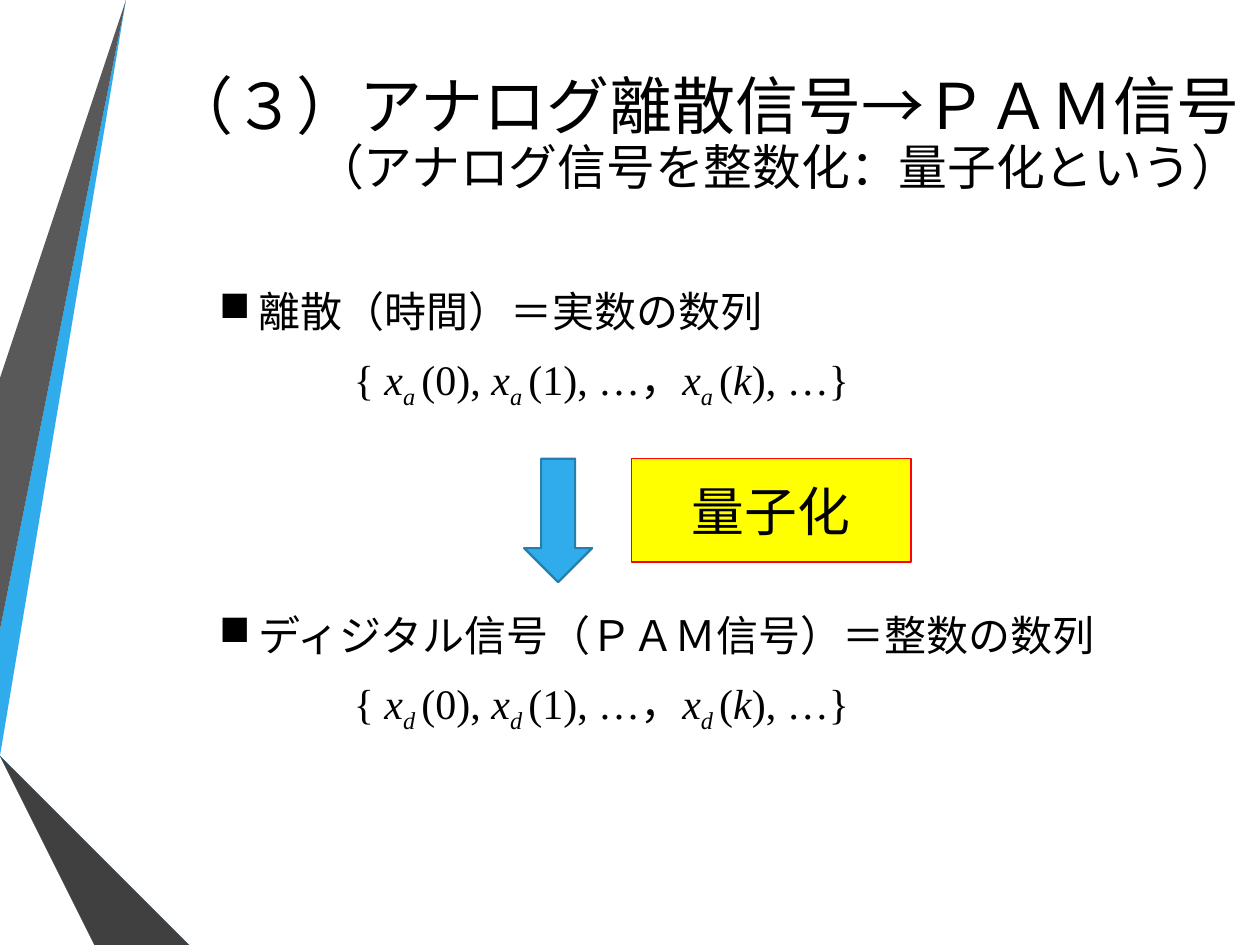
import pptx
import pptx.util
import pptx.dml.color
import pptx.enum.shapes
import pptx.enum.text
import pptx.oxml.ns
from lxml import etree

Inches, Pt = pptx.util.Inches, pptx.util.Pt
SHAPE = pptx.enum.shapes.MSO_SHAPE
ALIGN = pptx.enum.text.PP_ALIGN
MIDDLE = pptx.enum.text.MSO_ANCHOR.MIDDLE

W, H = 10, 7.5
COLORS = {"sky": "30ACEC", "sky_line": "247FAF", "blue": "1287C3", "navy": "0C5A82",
          "grey": "595959", "dark": "404040", "black": "262626",
          "text": "000000", "yellow": "FFFF00", "red": "FF0000"}
BANDS = [
    ("sky", [(0, 5.44), (0, 5.75), (0.22, 5.79), (1.17, 0), (0.89, 0)]),
    ("grey", [(0.83, 0), (0.55, 0), (0, 3.36), (0, 5.06)]),
    ("black", [(0, 6.19), (0, 6.21), (0.93, H), (0.99, H)]),
    ("navy", [(0, 5.79), (0, 5.8), (1.56, H), (1.63, H)]),
    ("blue", [(0, 5.79), (1.63, H), (2.33, H), (0.22, 5.79), (0, 5.75)]),
    ("dark", [(0, 6.19), (0.99, H), (1.51, H), (0, 5.86)]),
]
BODY_LEFT, BODY_WIDTH, BODY_HEIGHT = 1.64, 7.36, 1.83
ROW = 3.64  # top of the arrow and of the label beside it


def rgb(name):
    return pptx.dml.color.RGBColor.from_string(COLORS[name])


def paint(sp, fill, line=None, width=0.75):
    sp.shadow.inherit = False
    sp.fill.solid()
    sp.fill.fore_color.rgb = rgb(fill)
    if line:
        sp.line.color.rgb = rgb(line)
        sp.line.width = Pt(width)
    else:
        sp.line.fill.background()


def add_band(s, color, points):
    builder = s.shapes.build_freeform(*points[0], scale=Inches(1))
    builder.add_line_segments(points[1:], close=True)
    paint(builder.convert_to_shape(), color)


def add_run(p, text, size, font, italic=False, subscript=False):
    r = p.add_run()
    r.text = text
    for key, value in {"size": Pt(size), "name": font, "italic": italic}.items():
        setattr(r.font, key, value)
    r.font.color.rgb = rgb("text")
    if subscript:
        r.font._element.set("baseline", "-25000")


def set_indent(p, left, first=0, bullet=None):
    pPr = p._p.get_or_add_pPr()
    pPr.set("marL", str(Inches(left)))
    pPr.set("indent", str(Inches(first)))
    if bullet:
        etree.SubElement(pPr, pptx.oxml.ns.qn("a:buChar"), char=bullet)


def set_title(s):
    title = s.shapes.title
    for key, value in zip(("left", "top", "width", "height"), (0.92, 0.46, 9.02, 1.23)):
        setattr(title, key, Inches(value))
    tf = title.text_frame
    tf.vertical_anchor = MIDDLE
    tf.auto_size = pptx.enum.text.MSO_AUTO_SIZE.NONE
    p = tf.paragraphs[0]
    p.alignment, p.line_spacing = ALIGN.RIGHT, 0.9
    add_run(p, "（３）アナログ離散信号→ＰＡＭ信号", 36, "Calibri")
    p.add_line_break()
    add_run(p, "（アナログ信号を整数化：量子化という）", 27.9, "Calibri")


def add_sequence(p, index):
    """Write the sequence of x with the given subscript."""
    def put(text, **style):
        add_run(p, text, 24, "Times New Roman", **style)

    put("{ ")
    for after in ("(0), ", "(1), …，", "("):
        put("x", italic=True)
        put(index + " ", italic=True, subscript=True)
        put(after)
    put("k", italic=True)
    put("), …}")


def add_signal(s, top, heading, index):
    """Add a bulleted heading with its sequence below."""
    box = s.shapes.add_textbox(*map(Inches, (BODY_LEFT, top, BODY_WIDTH, BODY_HEIGHT)))
    tf = box.text_frame
    tf.word_wrap, tf.vertical_anchor = True, MIDDLE
    head, sequence = tf.paragraphs[0], tf.add_paragraph()
    for p in (head, sequence):
        p.line_spacing, p.space_before, p.space_after = 0.9, Pt(4), Pt(6)
    set_indent(head, 0.31, -0.31, "■")
    add_run(head, heading, 24, "Times New Roman")
    set_indent(sequence, 1.07)
    add_sequence(sequence, index)


def add_step(s, text):
    """Add the step's label and the arrow beside it."""
    label = s.shapes.add_shape(SHAPE.RECTANGLE, *map(Inches, (5.01, ROW, 2.22, 0.82)))
    paint(label, "yellow", "red")
    label.text_frame.vertical_anchor = MIDDLE
    p = label.text_frame.paragraphs[0]
    p.alignment = ALIGN.CENTER
    add_run(p, text, 30.2, "Calibri")
    arrow = s.shapes.add_shape(SHAPE.DOWN_ARROW, *map(Inches, (4.16, ROW, 0.54, 0.98)))
    paint(arrow, "sky", "sky_line", 1.25)


def main():
    prs = pptx.Presentation()
    prs.slide_width, prs.slide_height = Inches(W), Inches(H)
    s = prs.slides.add_slide(prs.slide_layouts[5])
    for color, points in BANDS:
        add_band(s, color, points)
    set_title(s)
    add_signal(s, 1.85, "離散（時間）＝実数の数列", "a")
    add_signal(s, 4.42, "ディジタル信号（ＰＡＭ信号）＝整数の数列", "d")
    add_step(s, "量子化")
    prs.save("out.pptx")


if __name__ == "__main__":
    main()
